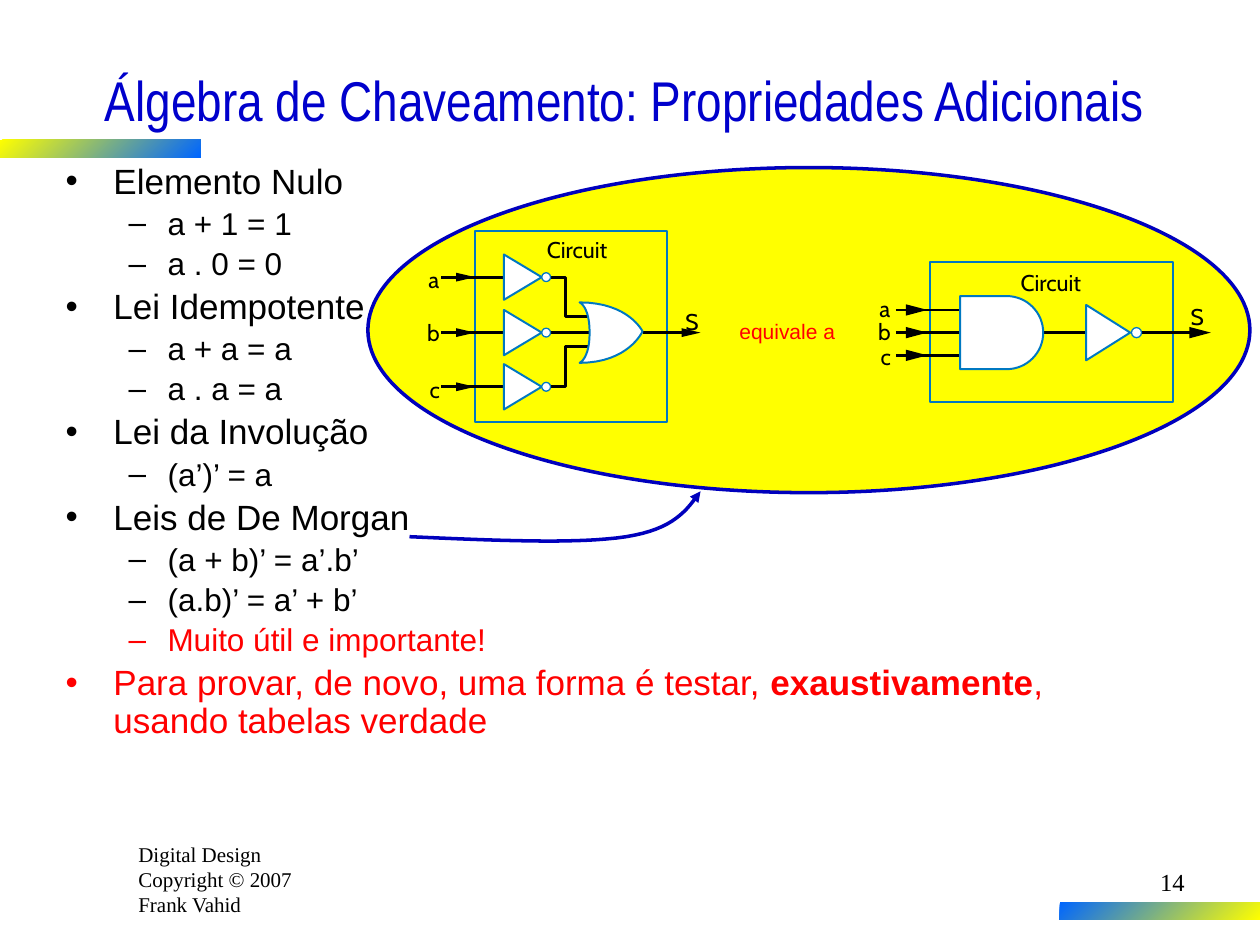
from dataclasses import dataclass
from lxml import etree
from pptx import Presentation
from pptx import util as u
from pptx.dml import color as clr
from pptx.enum import shapes, text
from pptx.oxml import ns

Inches, Pt = u.Inches, u.Pt


@dataclass(frozen=True)
class Theme:
    title: str = "0000CC"
    navy: str = "0000BD"
    gate: str = "0078C1"
    yellow: str = "FFFF00"
    blue: str = "0066FF"
    red: str = "FF0000"
    black: str = "000000"
    white: str = "FFFFFF"
    title_size: int = 32
    body_sizes: tuple = (20, 18)
    number_size: int = 14
    label_size: int = 13
    small_size: int = 12
    serif: str = "Times New Roman"
    sans: str = "Arial"
    narrow: str = "Arial Narrow"
    label: str = "Cabin"


T = Theme()


def write(p, txt, *, size, font=T.sans, color=T.black, bold=False, align=None):
    r = p.add_run()
    r.text = txt
    r.font.size, r.font.name, r.font.bold = Pt(size), font, bold
    r.font.color.rgb = clr.RGBColor.from_string(color)
    if align is not None:
        p.alignment = align


def paint(sp, fill=None, line=None, width=1.13):
    etree.SubElement(sp._element.spPr, ns.qn("a:effectLst"))
    if fill:
        sp.fill.solid()
        sp.fill.fore_color.rgb = clr.RGBColor.from_string(fill)
    elif hasattr(sp, "fill"):
        sp.fill.background()
    if line:
        sp.line.color.rgb = clr.RGBColor.from_string(line)
        sp.line.width = Pt(width)
    else:
        sp.line.fill.background()


prs = Presentation()
prs.slide_width, prs.slide_height = Inches(10), Inches(7.5)
s = prs.slides.add_slide(prs.slide_layouts[1])
title, body = s.placeholders[0], s.placeholders[1]

for sp, box in ((title, (0.25, 0.33, 9.42, 0.92)), (body, (0.42, 1.25, 8.83, 4.83))):
    sp.left, sp.top, sp.width, sp.height = map(Inches, box)
    sp.text_frame.auto_size = text.MSO_AUTO_SIZE.NONE
    sp.text_frame.word_wrap = True

title.text_frame.vertical_anchor = text.MSO_ANCHOR.MIDDLE
write(title.text_frame.paragraphs[0], "Álgebra de Chaveamento: Propriedades Adicionais",
      size=T.title_size, font=T.narrow, color=T.title, align=text.PP_ALIGN.CENTER)

items = [
    (0, "Elemento Nulo"), (1, "a + 1 = 1"), (1, "a . 0 = 0"),
    (0, "Lei Idempotente"), (1, "a + a = a"), (1, "a . a = a"),
    (0, "Lei da Involução"), (1, "(a’)’ = a"),
    (0, "Leis de De Morgan"), (1, "(a + b)’ = a’.b’"), (1, "(a.b)’ = a’ + b’"),
    (1, "Muito útil e importante!"),
    (0, "Para provar, de novo, uma forma é testar, |exaustivamente|, usando tabelas verdade"),
]
red_from = len(items) - 2
for i, (level, txt) in enumerate(items):
    tf = body.text_frame
    p = tf.add_paragraph() if i else tf.paragraphs[0]
    margin, hang, mark = ((0.38, 0.38, "•"), (0.81, 0.31, "–"))[level]
    pPr = p._p.get_or_add_pPr()
    pPr.set("marL", str(Inches(margin)))
    pPr.set("indent", str(-Inches(hang)))
    etree.SubElement(pPr, ns.qn("a:buChar")).set("char", mark)
    size = T.body_sizes[level]
    p.level = level
    p.line_spacing = 0.9
    p.space_before = Pt(0.2 * size if i else 0)
    for j, part in enumerate(txt.split("|")):
        write(p, part, size=size, bold=j == 1, color=T.red if i >= red_from else T.black)

for x, y, stops in ((0, 1.11, (T.yellow, T.blue)), (8.41, 7.16, (T.blue, T.yellow))):
    sp = s.shapes.add_shape(shapes.MSO_SHAPE.RECTANGLE, *map(Inches, (x, y, 1.59, 0.14)))
    paint(sp)
    sp.fill.gradient()
    sp.fill.gradient_angle = 315
    for stop, color in zip(sp.fill.gradient_stops, stops):
        stop.color.rgb = clr.RGBColor.from_string(color)

oval = s.shapes.add_shape(shapes.MSO_SHAPE.OVAL, *map(Inches, (2.92, 1.33, 7, 2.58)))
paint(oval, T.yellow, T.navy, 2)

mid = 2.64
rows = (2.2, mid, 3.07)
inputs = (2.46, mid, 2.82)
circuits = [
    dict(
        frame=(3.77, 1.83, 1.52, 1.52),
        wires=[[(3.5, y), (4, y)] for y in rows]
        + [[(4.36, mid), (4.68, mid)], [(5.1, mid), (5.47, mid)]]
        + [[(4.67, end), (4.49, end), (4.49, y), (4.32, y)]
           for y, end in ((rows[0], 2.51), (rows[2], 2.75))],
        arrows=[(3.77, y) for y in rows] + [(5.56, mid)], arrow=(0.15, 0.035),
        inverters=[(4, y) for y in rows], inverter=(0.3, 0.18),
        bubble=(4.3, 0.07),
        gate=[(5.1, 2.63), (5.1, 2.63), (4.99, 2.88), (4.6, 2.88),
              (4.6, 2.88), (4.68, 2.85), (4.68, 2.64),
              (4.68, 2.43), (4.6, 2.4), (4.6, 2.4),
              (4.99, 2.4), (5.1, 2.63), (5.1, 2.63)],
        labels=[("Circuit", 4.34, 1.87), ("a", 3.4, 2.11), ("b", 3.39, 2.53),
                ("c", 3.41, 2.98), ("S", 5.44, 2.44)],
    ),
    dict(
        frame=(7.38, 2.08, 1.93, 1.11),
        wires=[[(7.11, y), (7.62, y)] for y in inputs]
        + [[(8.25, mid), (8.62, mid)], [(9.06, mid), (9.51, mid)]],
        arrows=[(7.36, y) for y in inputs] + [(9.61, mid)], arrow=(0.17, 0.045),
        inverters=[(8.62, mid)], inverter=(0.35, 0.22),
        bubble=(8.98, 0.08),
        gate=[(7.62, 2.93), (7.62, 2.93), (7.99, 2.93), (7.99, 2.93),
              (8.15, 2.93), (8.28, 2.8), (8.28, mid),
              (8.28, 2.48), (8.15, 2.35), (7.99, 2.35),
              (7.99, 2.35), (7.62, 2.35), (7.62, 2.35)],
        labels=[("Circuit", 8.1, 2.13), ("a", 6.98, 2.34), ("b", 6.97, 2.52),
                ("c", 6.99, 2.72), ("S", 9.45, 2.4)],
    ),
]

curves = []
for c in circuits:
    g = s.shapes.add_group_shape().shapes
    paint(g.add_shape(shapes.MSO_SHAPE.RECTANGLE, *map(Inches, c["frame"])), line=T.gate)
    for wire in c["wires"]:
        pts = [(Inches(x), Inches(y)) for x, y in wire]
        if len(pts) == 2:
            sp = g.add_connector(shapes.MSO_CONNECTOR.STRAIGHT, *pts[0], *pts[1])
        else:
            fb = g.build_freeform(*pts[0])
            fb.add_line_segments(pts[1:], close=False)
            sp = fb.convert_to_shape()
        paint(sp, line=T.black, width=1.63)
    length, half = c["arrow"]
    depth, rise = c["inverter"]
    triangles = [(x - length, x, y, half, T.black, None) for x, y in c["arrows"]]
    triangles += [(x, x + depth, y, rise, T.white, T.gate) for x, y in c["inverters"]]
    for base, tip, y, h, fill, line in triangles:
        fb = g.build_freeform(Inches(tip), Inches(y))
        fb.add_line_segments([(Inches(base), Inches(y - h)), (Inches(base), Inches(y + h))])
        paint(fb.convert_to_shape(), fill, line)
    x, d = c["bubble"]
    for _, y in c["inverters"]:
        sp = g.add_shape(shapes.MSO_SHAPE.OVAL, *map(Inches, (x, y - d / 2, d, d)))
        paint(sp, T.white, T.gate, 0.75)
    curves.append((g, c["gate"], True))
    for txt, x, y in c["labels"]:
        tf = g.add_textbox(*map(Inches, (x, y, 0.51 if len(txt) > 1 else 0.1, 0.22))).text_frame
        tf.margin_left = tf.margin_right = tf.margin_top = tf.margin_bottom = 0
        tf.word_wrap = False
        write(tf.paragraphs[0], txt, size=T.label_size, font=T.label)

pointer = [(3.25, 4.26), (3.92, 4.29), (4.58, 4.32), (4.97, 4.26),
           (5.35, 4.2), (5.45, 4.05), (5.56, 3.9)]
curves.append((s.shapes, pointer, False))
steps = 16
for parent, nodes, closed in curves:
    pts = [(Inches(nodes[0][0]), Inches(nodes[0][1]))]
    for k in range(0, len(nodes) - 1, 3):
        for n in range(1, steps + 1):
            t = n / steps
            weights = ((1 - t) ** 3, 3 * t * (1 - t) ** 2, 3 * t * t * (1 - t), t ** 3)
            pts.append(tuple(Inches(sum(w * node[axis] for w, node in zip(weights, nodes[k:k + 4])))
                             for axis in (0, 1)))
    fb = parent.build_freeform(*pts[0])
    fb.add_line_segments(pts[1:], close=closed)
    sp = fb.convert_to_shape()
    if closed:
        paint(sp, T.white, T.gate)
    else:
        paint(sp, line=T.navy, width=2)
        etree.SubElement(sp.line._get_or_add_ln(), ns.qn("a:tailEnd")).set("type", "triangle")

notes = [
    ((1, 6.63, 1.67, 0.71), ["Digital Design", "Copyright © 2007", "Frank Vahid"],
     dict(size=T.small_size, font=T.serif)),
    ((7.42, 6.83, 2.08, 0.5), ["14"],
     dict(size=T.number_size, font=T.serif, align=text.PP_ALIGN.RIGHT)),
    ((5.77, 2.48, 1.03, 0.3), ["equivale a"], dict(size=T.small_size, color=T.red)),
]
for box, lines, style in notes:
    tf = s.shapes.add_textbox(*map(Inches, box)).text_frame
    tf.word_wrap = True
    for i, txt in enumerate(lines):
        write(tf.add_paragraph() if i else tf.paragraphs[0], txt, **style)

prs.save("out.pptx")
